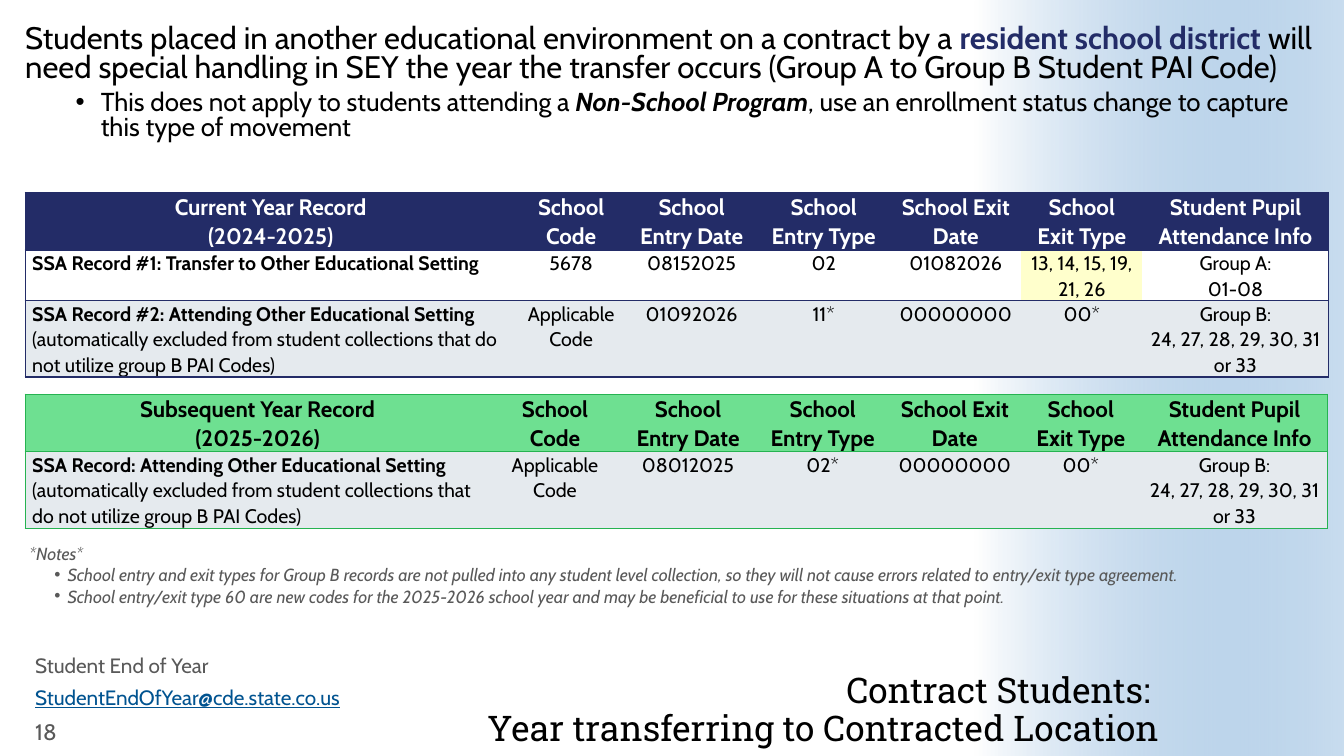
from lxml import etree
from pptx import Presentation
from pptx.dml.color import RGBColor
from pptx.enum.shapes import MSO_SHAPE as Shape
from pptx.enum.text import MSO_ANCHOR as Anchor, PP_ALIGN as Align
from pptx.oxml.ns import qn
from pptx.util import Inches, Pt

BLACK = RGBColor(0x00, 0x00, 0x00)
WHITE = RGBColor(0xFF, 0xFF, 0xFF)
GRAY = RGBColor(0x59, 0x59, 0x59)
NAVY = RGBColor(0x23, 0x2C, 0x67)
BLUE = RGBColor(0x48, 0x8B, 0xC9)
LINK = RGBColor(0x00, 0x53, 0x90)
LIME = RGBColor(0x6E, 0xE0, 0x91)
GREEN = RGBColor(0x26, 0xB3, 0x51)
CREAM = RGBColor(0xFF, 0xFF, 0xCC)
PALE = RGBColor(0xE5, 0xEA, 0xEE)

HEADS = ["School Code", "School Entry Date", "School Entry Type", "School Exit Date",
         "School Exit Type", "Student Pupil Attendance Info"]
EXCLUDED = "(automatically excluded from student collections that do not utilize group B PAI Codes)"
GROUP_B = "Group B:\v24, 27, 28, 29, 30, 31 or 33"
LAST = [1.32, 1.3, 1.2, 1.85]


class Deck:
    """Holds the text style and the current slide."""

    def __init__(self, font):
        self.font = font
        self.prs = Presentation()
        self.prs.slide_width = Inches(13.33)
        self.prs.slide_height = Inches(7.5)
        self.slide = self.prs.slides.add_slide(self.prs.slide_layouts[6])

    def fade(self, box, turn):
        rect = self.slide.shapes.add_shape(Shape.RECTANGLE, *map(Inches, box))
        rect.shadow.inherit = False
        rect.rotation = turn
        rect.line.fill.background()
        rect.fill.gradient()
        rect.fill.gradient_angle = 270
        for stop, color in zip(rect.fill.gradient_stops, (WHITE, BLUE)):
            stop.color.rgb = color
        tint = list(rect.element.iter(qn("a:srgbClr")))[-1]
        etree.SubElement(tint, qn("a:alpha"), val="30000")

    def style(self, font, size, color, bold=False, italic=False, under=False, name=None):
        font.name = name or self.font
        font.size = Pt(size)
        font.color.rgb = color
        font.bold, font.italic, font.underline = bold, italic, under

    def text(self, box, inset=(0.1, 0.05), anchor=Anchor.TOP):
        frame = self.slide.shapes.add_textbox(*map(Inches, box)).text_frame
        frame.word_wrap = True
        frame.vertical_anchor = anchor
        frame.margin_left = frame.margin_right = Inches(inset[0])
        frame.margin_top = frame.margin_bottom = Inches(inset[1])
        return frame

    def para(self, frame, words, size, color, lead=1.0, first=True, gap=5, indent=None,
             align=Align.LEFT, **look):
        para = frame.paragraphs[0] if first else frame.add_paragraph()
        para.alignment = align
        para.line_spacing = lead
        if not first:
            para.space_before = Pt(gap)
        if indent:
            left, hang = indent
            props = para._p.get_or_add_pPr()
            props.set("marL", str(Inches(left)))
            props.set("indent", str(Inches(hang)))
            etree.SubElement(props, qn("a:buFont"), typeface="Arial")
            etree.SubElement(props, qn("a:buChar"), char="•")
        if isinstance(words, str):
            para.text = words
            for run in para.runs:
                self.style(run.font, size, color, **look)
            return
        for part, extra in words:
            run = para.add_run()
            run.text = part
            self.style(run.font, size, **{"color": color, **look, **extra})

    def edge(self, cell, side, color):
        line = etree.SubElement(cell._tc.get_or_add_tcPr(), qn(f"a:ln{side}"), w=str(Pt(1)))
        if color is None:
            etree.SubElement(line, qn("a:noFill"))
        else:
            fill = etree.SubElement(line, qn("a:solidFill"))
            etree.SubElement(fill, qn("a:srgbClr"), val=str(color))

    def cell(self, cell, words, fill, size, color, align, bold):
        cell.margin_left = cell.margin_right = Inches(0.07)
        cell.margin_top = cell.margin_bottom = 0
        cell.fill.solid()
        cell.fill.fore_color.rgb = fill
        para = cell.text_frame.paragraphs[0]
        para.text = words
        para.alignment = align
        para.line_spacing = 1.07
        para.space_after = Pt(8)
        for pos, run in enumerate(para.runs):
            self.style(run.font, size, color, bold=bold(pos))

    def table(self, top, cols, tall, rows, band, ink, rim, fills):
        box = map(Inches, (0.25, top, sum(cols), sum(tall)))
        table = self.slide.shapes.add_table(len(rows), len(cols), *box).table
        table.first_row = table.horz_banding = False
        for col, width in zip(table.columns, cols):
            col.width = Inches(width)
        for r, (row, high) in enumerate(zip(rows, tall)):
            table.rows[r].height = Inches(high)
            for c, words in enumerate(row):
                cell = table.cell(r, c)
                self.edge(cell, "L", rim if c == 0 else None)
                self.edge(cell, "R", rim if c == len(cols) - 1 else None)
                self.edge(cell, "T", rim)
                self.edge(cell, "B", rim)
                if r == 0:
                    self.cell(cell, words, band, 16, ink, Align.CENTER, lambda pos: True)
                else:
                    fill = CREAM if words.startswith("13,") else fills[r - 1]
                    align = Align.CENTER if c else Align.LEFT
                    self.cell(cell, words, fill, 14, BLACK, align,
                              lambda pos: c == 0 and pos == 0)


def main():
    deck = Deck("Cabin")
    deck.fade((7.75, 1.92, 7.5, 3.66), 270)

    title = deck.text((4.26, 6.45, 7.24, 0.98), (0, 0), Anchor.BOTTOM)
    deck.para(title, "Contract Students: \vYear transferring to Contracted Location", 25.2,
              BLACK, 0.9, align=Align.RIGHT, name="Roboto Slab")

    body = deck.text((0.25, 0.25, 12.83, 1.5), (0, 0))
    deck.para(body, [
        ("Students placed in another educational environment on a contract by a ", {}),
        ("resident school district ", {"color": NAVY, "bold": True}),
        ("will need special handling in SEY the year the transfer occurs "
         "(Group A to Group B Student PAI Code)", {})], 22.2, BLACK, 0.8)
    deck.para(body, [
        ("This does not apply to students attending a ", {}),
        ("Non-School Program", {"bold": True, "italic": True}),
        (", use an enrollment status change to capture this type of movement", {})],
        18.5, BLACK, 0.8, first=False, indent=(0.75, -0.25))

    deck.table(1.91, [4.87, 1.09, 1.3] + LAST, [0.57, 0.5, 0.76], [
        ["Current Year Record\v(2024-2025)"] + HEADS,
        ["SSA Record #1: Transfer to Other Educational Setting", "5678", "08152025", "02",
         "01082026", "13, 14, 15, 19, 21, 26", "Group A:\v01-08"],
        ["SSA Record #2: Attending Other Educational Setting\v" + EXCLUDED, "Applicable Code",
         "01092026", "11*", "00000000", "00*", GROUP_B],
    ], NAVY, WHITE, NAVY, [WHITE, PALE])
    deck.table(3.91, [4.61, 1.29, 1.35] + LAST, [0.57, 0.76], [
        ["Subsequent Year Record\v(2025-2026)"] + HEADS,
        ["SSA Record: Attending Other Educational Setting\v" + EXCLUDED, "Applicable Code",
         "08012025", "02*", "00000000", "00*", GROUP_B],
    ], LIME, BLACK, GREEN, [PALE])

    notes = deck.text((0.29, 5.44, 12.83, 0.78), (0, 0))
    deck.para(notes, "*Notes*", 12.5, GRAY, 0.7, italic=True)
    for words in (
        "School entry and exit types for Group B records are not pulled into any student level "
        "collection, so they will not cause errors related to entry/exit type agreement.",
        "School entry/exit type 60 are new codes for the 2025-2026 school year and may be "
        "beneficial to use for these situations at that point.",
    ):
        deck.para(notes, words, 12.5, GRAY, 0.7, first=False, indent=(0.38, -0.13), italic=True)

    deck.para(deck.text((0.25, 6.47, 3.89, 0.31)), "Student End of Year", 14.8, GRAY, 0.8)
    deck.para(deck.text((0.25, 6.79, 3.89, 0.31)), "StudentEndOfYear@cde.state.co.us", 14.8,
              LINK, 0.8, under=True)
    deck.para(deck.text((0.25, 7.1, 0.85, 0.31), anchor=Anchor.MIDDLE), "18", 16, GRAY)
    deck.prs.save("out.pptx")


if __name__ == "__main__":
    main()
